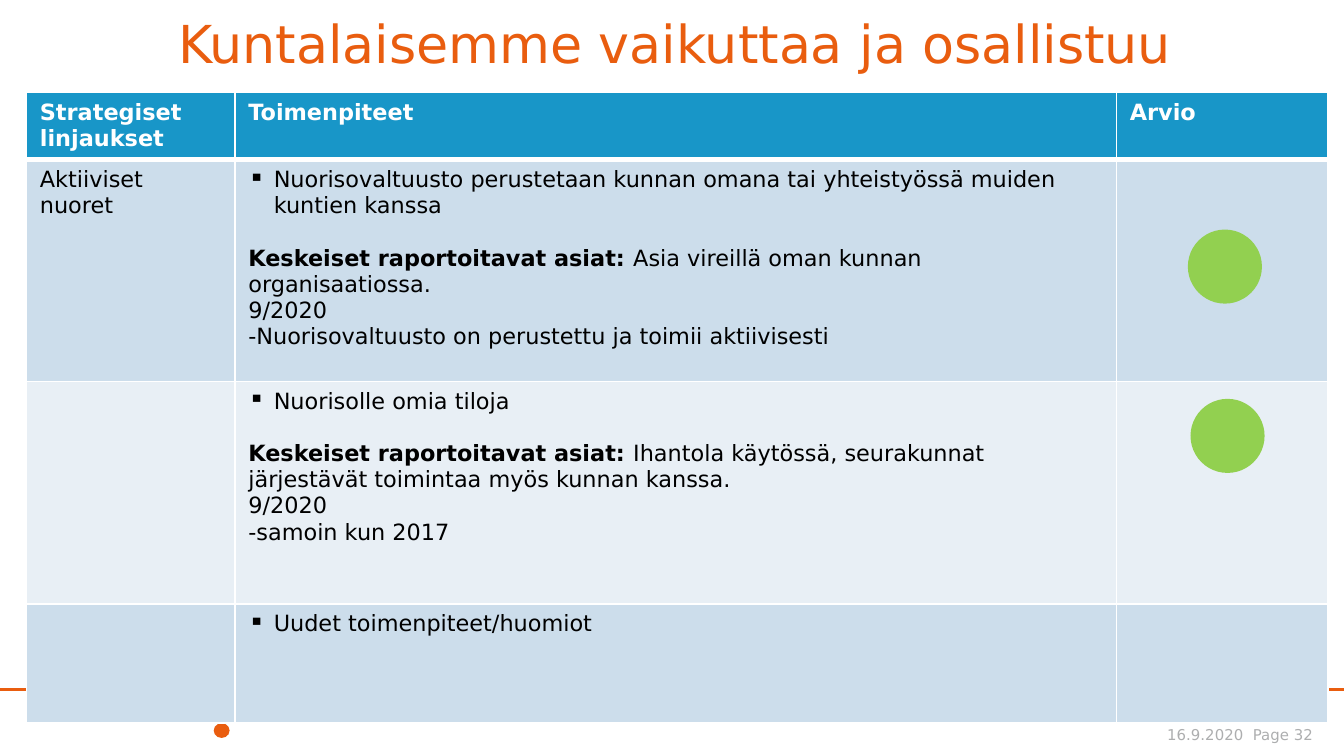
from dataclasses import dataclass

from lxml import etree
from pptx import Presentation
from pptx.dml.color import RGBColor
from pptx.enum.shapes import MSO_CONNECTOR, MSO_SHAPE
from pptx.enum.text import MSO_ANCHOR, PP_ALIGN
from pptx.oxml.ns import qn
from pptx.util import Cm, Pt

STRAIGHT = MSO_CONNECTOR.STRAIGHT
OVAL = MSO_SHAPE.OVAL
BOTTOM = MSO_ANCHOR.BOTTOM
CENTER, RIGHT = PP_ALIGN.CENTER, PP_ALIGN.RIGHT
TITLE_ONLY = 5


@dataclass(frozen=True)
class Theme:
    """Colours, font and type sizes of the slide."""
    font: str = "DejaVu Sans"
    accent: str = "E95D0F"
    header: str = "1896C8"
    bands: tuple = ("CCDDEB", "E8EFF5")
    border: str = "FFFFFF"
    header_text: str = "FFFFFF"
    body_text: str = "000000"
    footer_text: str = "ADAEAF"
    good: str = "92D050"
    title_size: int = 28
    table_size: int = 12
    footer_size: int = 8


THEME = Theme()

REPORT_LABEL = "Keskeiset raportoitavat asiat: "
HEADINGS = ["Strategiset linjaukset", "Toimenpiteet", "Arvio"]
GUIDELINES = [
    ("Aktiiviset nuoret",
     "Nuorisovaltuusto perustetaan kunnan omana tai yhteistyössä muiden kuntien kanssa",
     "Asia vireillä oman kunnan organisaatiossa.",
     ["9/2020", "-Nuorisovaltuusto on perustettu ja toimii aktiivisesti"]),
    ("", "Nuorisolle omia tiloja",
     "Ihantola käytössä, seurakunnat järjestävät toimintaa myös kunnan kanssa.",
     ["9/2020", "-samoin kun 2017"]),
    ("", "Uudet toimenpiteet/huomiot", "", []),
]
COLUMN_WIDTHS = [3.94, 16.66, 4]
ROW_HEIGHTS = [1.22, 4.19, 4.21, 2.24]
RATINGS = [(22.45, 4.34, 1.4, 1.4), (22.5, 7.54, 1.4, 1.4)]


def add_run(paragraph, text, size, color, bold=False):
    """Append one formatted run to the paragraph."""
    run = paragraph.add_run()
    run.text = text
    run.font.name = THEME.font
    run.font.size = Pt(size)
    run.font.bold = bold
    run.font.color.rgb = RGBColor.from_string(color)


def clear_margins(frame):
    """Remove the inner margins of a text frame and wrap its text."""
    frame.margin_left = frame.margin_right = 0
    frame.margin_top = frame.margin_bottom = 0
    frame.word_wrap = True
    frame.vertical_anchor = BOTTOM


def add_dot(slide, box, color):
    """Draw a plain filled ellipse in the box."""
    dot = slide.shapes.add_shape(OVAL, *map(Cm, box))
    dot.shadow.inherit = False
    dot.fill.solid()
    dot.fill.fore_color.rgb = RGBColor.from_string(color)
    dot.line.fill.background()


def add_title(slide, box):
    """Place and format the title placeholder."""
    title = slide.shapes.title
    title.left, title.top, title.width, title.height = map(Cm, box)
    clear_margins(title.text_frame)
    heading = title.text_frame.paragraphs[0]
    heading.alignment = CENTER
    heading.line_spacing = 0.9
    add_run(heading, "Kuntalaisemme vaikuttaa ja osallistuu", THEME.title_size, THEME.accent)


def add_footer(slide, box):
    """Draw the footer rule, its dot and the page stamp in the box."""
    left, top, width, height = box
    rule = slide.shapes.add_connector(STRAIGHT, Cm(left), Cm(top), Cm(left + width), Cm(top))
    rule.line.color.rgb = RGBColor.from_string(THEME.accent)
    rule.line.width = Pt(1.5)
    etree.SubElement(rule._element.spPr, qn("a:effectLst"))
    add_dot(slide, (left + 4.04, top + 0.64, 0.3, 0.28), THEME.accent)
    stamp = slide.shapes.add_textbox(
        Cm(left + width - 9.42), Cm(top + height - 0.51), Cm(8.84), Cm(0.51))
    clear_margins(stamp.text_frame)
    date_and_page = stamp.text_frame.paragraphs[0]
    date_and_page.alignment = RIGHT
    add_run(date_and_page, "16.9.2020  Page 32", THEME.footer_size, THEME.footer_text)


def style_cell(cell, fill, top=1, bottom=1):
    """Fill the cell and give it borders on all sides."""
    cell.fill.solid()
    cell.fill.fore_color.rgb = RGBColor.from_string(fill)
    properties = cell._tc.get_or_add_tcPr()
    sides = {"a:lnL": 1, "a:lnR": 1, "a:lnT": top, "a:lnB": bottom}
    for position, (side, width) in enumerate(sides.items()):
        border = etree.Element(qn(side), w=str(Pt(width)))
        paint = etree.SubElement(border, qn("a:solidFill"))
        etree.SubElement(paint, qn("a:srgbClr"), val=THEME.border)
        properties.insert(position, border)


def add_bullet(paragraph):
    """Give the paragraph a square bullet with a hanging indent."""
    properties = paragraph._p.get_or_add_pPr()
    properties.set("marL", str(Cm(0.48)))
    properties.set("indent", str(Cm(-0.48)))
    etree.SubElement(properties, qn("a:buChar"), char="▪")


def write_actions(frame, action, report, updates):
    """Write a bulleted action followed by its report and updates."""
    size, color = THEME.table_size, THEME.body_text
    bullet = frame.paragraphs[0]
    add_bullet(bullet)
    add_run(bullet, action, size, color)
    if report:
        summary = frame.add_paragraph()
        summary.space_before = Pt(14)
        add_run(summary, REPORT_LABEL, size, color, bold=True)
        add_run(summary, report, size, color)
    for update in updates:
        add_run(frame.add_paragraph(), update, size, color)


def add_guidelines(slide, box):
    """Build the table of guidelines, actions and ratings in the box."""
    table = slide.shapes.add_table(
        len(ROW_HEIGHTS), len(COLUMN_WIDTHS), *map(Cm, box)).table
    for column, width in zip(table.columns, COLUMN_WIDTHS):
        column.width = Cm(width)
    for row, height in zip(table.rows, ROW_HEIGHTS):
        row.height = Cm(height)
    for cell, heading in zip(table.rows[0].cells, HEADINGS):
        style_cell(cell, THEME.header, bottom=3)
        add_run(cell.text_frame.paragraphs[0], heading,
                THEME.table_size, THEME.header_text, bold=True)
    for index, (guideline, action, report, updates) in enumerate(GUIDELINES):
        cells = list(table.rows[index + 1].cells)
        for cell in cells:
            style_cell(cell, THEME.bands[index % 2], top=1 if index else 3)
        if guideline:
            add_run(cells[0].text_frame.paragraphs[0], guideline,
                    THEME.table_size, THEME.body_text)
        write_actions(cells[1].text_frame, action, report, updates)


def main():
    """Build the slide and save it."""
    presentation = Presentation()
    presentation.slide_width, presentation.slide_height = Cm(25.4), Cm(14.29)
    slide = presentation.slides.add_slide(presentation.slide_layouts[TITLE_ONLY])
    add_title(slide, (0.1, 0.12, 25.3, 1.3))
    add_footer(slide, (0, 13.03, 25.4, 1.02))
    add_guidelines(slide, (0.5, 1.75, sum(COLUMN_WIDTHS), sum(ROW_HEIGHTS)))
    for rating in RATINGS:
        add_dot(slide, rating, THEME.good)
    presentation.save("out.pptx")


if __name__ == "__main__":
    main()
